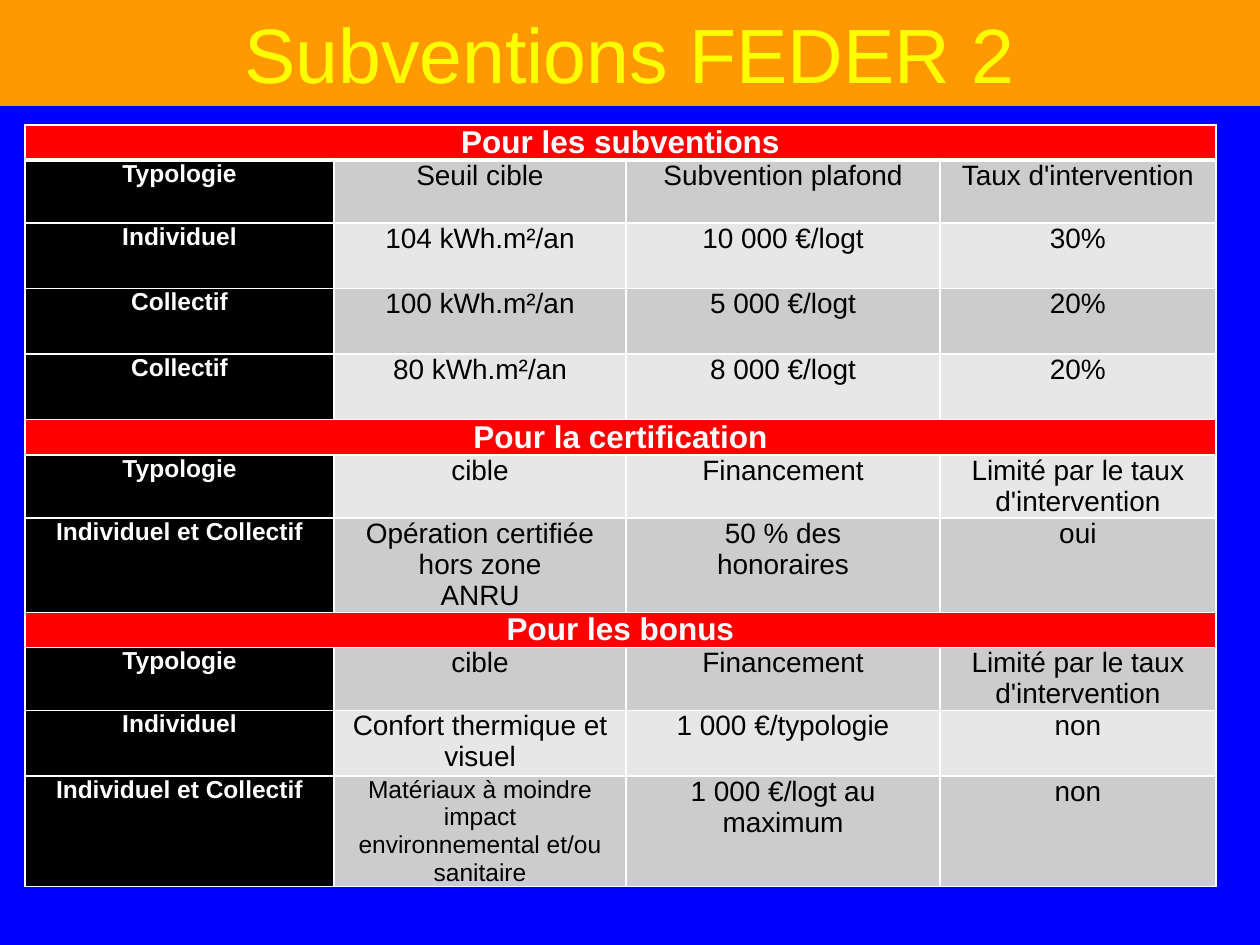
from lxml import etree
from pptx import Presentation
from pptx.dml.color import RGBColor
from pptx.enum import shapes, text
from pptx.oxml import ns
from pptx.util import Inches, Pt

FONT = "Arial"
COLORS = {
    "background": "0000FF",
    "banner": "FF9900",
    "title": "FFFF00",
    "section": "FF0000",
    "typology": "000000",
    "dark_band": "CCCCCC",
    "light_band": "E7E7E7",
    "white": "FFFFFF",
    "black": "000000",
}
COLUMN_WIDTHS = [2.45, 2.32, 2.49, 2.19]
# Each row: height in inches, then its cells; a single cell is a section heading.
ROWS = [
    (0.28, ["Pour les subventions"]),
    (0.5, ["Typologie", "Seuil cible", "Subvention plafond", "Taux d'intervention"]),
    (0.52, ["Individuel", "104 kWh.m²/an", "10 000 €/logt", "30%"]),
    (0.52, ["Collectif", "100 kWh.m²/an", "5 000 €/logt", "20%"]),
    (0.52, ["Collectif", "80 kWh.m²/an", "8 000 €/logt", "20%"]),
    (0.28, ["Pour la certification"]),
    (0.5, ["Typologie", "cible", "Financement", "Limité par le taux d'intervention"]),
    (0.75, ["Individuel et Collectif", "Opération certifiée hors zone\nANRU",
            "50 % des\nhonoraires", "oui"]),
    (0.28, ["Pour les bonus"]),
    (0.5, ["Typologie", "cible", "Financement", "Limité par le taux d'intervention"]),
    (0.52, ["Individuel", "Confort thermique et visuel", "1 000 €/typologie", "non"]),
    (0.87, ["Individuel et Collectif",
            "Matériaux à moindre impact\nenvironnemental et/ou\nsanitaire",
            "1 000 €/logt au\nmaximum", "non"]),
]


def rgb(name):
    return RGBColor.from_string(COLORS[name])


def write_text(frame, content, size, color, bold=False):
    frame.text = content
    for paragraph in frame.paragraphs:
        paragraph.alignment = text.PP_ALIGN.CENTER
        for run in paragraph.runs:
            run.font.name = FONT
            run.font.size = Pt(size)
            run.font.bold = bold
            run.font.color.rgb = rgb(color)


def set_borders(cell, bottom_width=1):
    """Draw white lines on all sides; they must precede the fill in the XML."""
    properties = cell._tc.get_or_add_tcPr()
    widths = {"a:lnL": 1, "a:lnR": 1, "a:lnT": 1, "a:lnB": bottom_width}
    for position, (tag, width) in enumerate(widths.items()):
        line = etree.Element(ns.qn(tag), w=str(Pt(width)))
        fill = etree.SubElement(line, ns.qn("a:solidFill"))
        etree.SubElement(fill, ns.qn("a:srgbClr"), val=COLORS["white"])
        properties.insert(position, line)


def style_cell(cell, content, fill, size, color, bold=False):
    cell.margin_left = cell.margin_right = Inches(0.07)
    cell.margin_top = cell.margin_bottom = 0
    cell.fill.solid()
    cell.fill.fore_color.rgb = rgb(fill)
    write_text(cell.text_frame, content, size, color, bold)


def add_banner(slide, title):
    banner = slide.shapes.add_shape(
        shapes.MSO_SHAPE.RECTANGLE, 0, 0, Inches(10), Inches(0.84))
    banner.shadow.inherit = False
    banner.fill.solid()
    banner.fill.fore_color.rgb = rgb("banner")
    banner.line.fill.background()
    banner.text_frame.vertical_anchor = text.MSO_ANCHOR.MIDDLE
    write_text(banner.text_frame, title, 44, "title")


def add_grants_table(slide):
    height = sum(row_height for row_height, _ in ROWS)
    table = slide.shapes.add_table(
        len(ROWS), len(COLUMN_WIDTHS), Inches(0.2), Inches(0.99),
        Inches(sum(COLUMN_WIDTHS)), Inches(height)).table
    for column, width in zip(table.columns, COLUMN_WIDTHS):
        column.width = Inches(width)

    for index, (row_height, contents) in enumerate(ROWS):
        table.rows[index].height = Inches(row_height)
        cells = [table.cell(index, column) for column in range(len(COLUMN_WIDTHS))]
        for cell in cells:
            set_borders(cell, bottom_width=3 if index == 0 else 1)
        if len(contents) == 1:
            cells[0].merge(cells[-1])
            style_cell(cells[0], contents[0], "section", 18, "white", bold=True)
            continue
        typology, *values = contents
        style_cell(cells[0], typology, "typology", 14, "white", bold=True)
        band = "dark_band" if index % 2 else "light_band"
        for cell, value in zip(cells[1:], values):
            size = 14 if value.startswith("Matériaux") else 16
            style_cell(cell, value, band, size, "black")


def main():
    presentation = Presentation()
    presentation.slide_width, presentation.slide_height = Inches(10), Inches(7.5)
    slide = presentation.slides.add_slide(presentation.slide_layouts[6])
    slide.background.fill.solid()
    slide.background.fill.fore_color.rgb = rgb("background")
    add_banner(slide, "Subventions FEDER 2")
    add_grants_table(slide)
    presentation.save("out.pptx")


if __name__ == "__main__":
    main()
